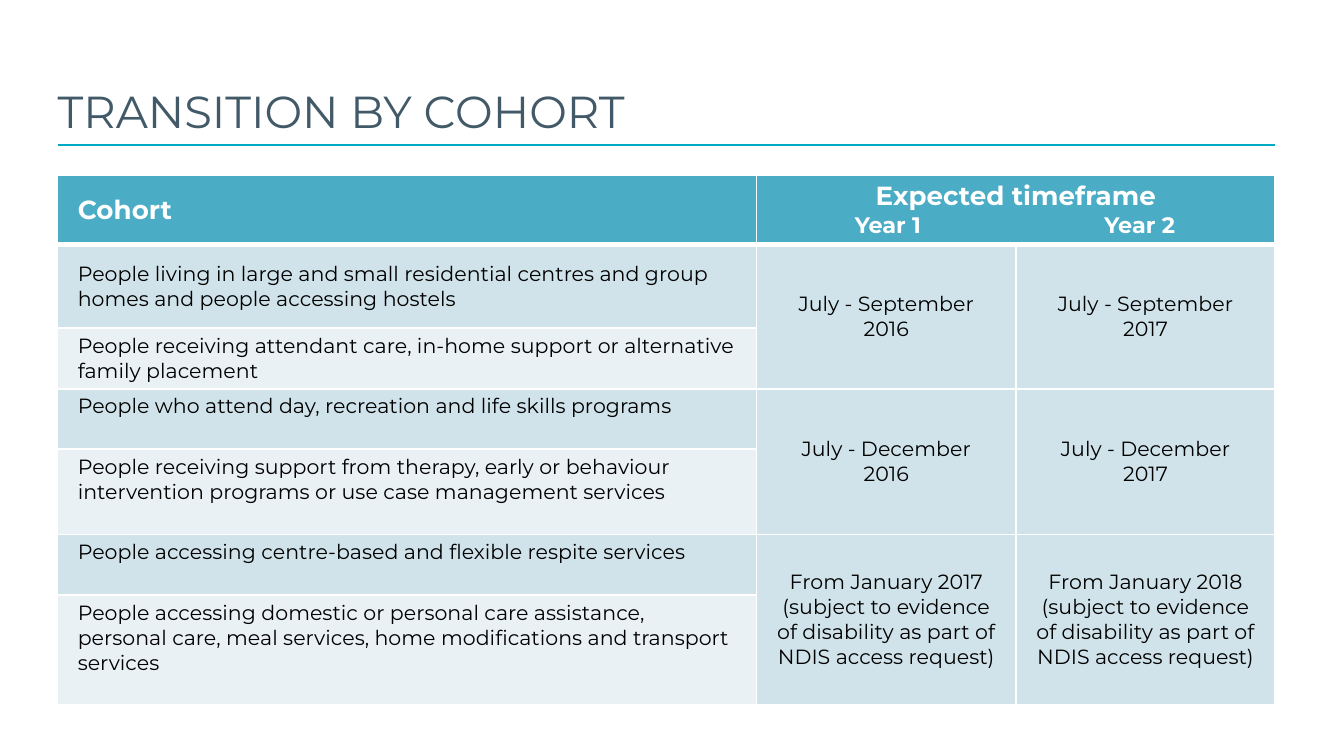
from dataclasses import dataclass

from lxml import etree
from pptx import Presentation, util as u
from pptx.dml.color import RGBColor
from pptx.enum import shapes, text
from pptx.oxml import ns


@dataclass(frozen=True)
class Theme:
    font: str = "Montserrat"
    title: str = "425968"
    rule: str = "00ABC3"
    header: str = "4BACC6"
    dark_band: str = "D0E3EA"
    light_band: str = "E9F1F5"
    white: str = "FFFFFF"
    black: str = "000000"
    title_size: int = 24
    header_size: int = 14
    year_size: int = 12
    body_size: int = 11


LEFT, WIDTH = 1.09, 23.01
COLUMNS = [13.21, 4.9, 4.9]
ROWS = [1.3, 1.57, 1.14, 1.14, 1.62, 1.14, 2.08]
YEAR_CENTRES = [2.1, 6.86]

COHORTS = [
    "People living in large and small residential centres and group homes "
    "and people accessing hostels",
    "People receiving attendant care, in-home support or alternative family placement",
    "People who attend day, recreation and life skills programs",
    "People receiving support from therapy, early or behaviour intervention programs "
    "or use case management services",
    "People accessing centre-based and flexible respite services",
    "People accessing domestic or personal care assistance, personal care, "
    "meal services, home modifications and transport services",
]
EVIDENCE = "(subject to evidence of disability as part of NDIS access request)"
TIMEFRAMES = [
    ("July - September 2016", "July - September 2017"),
    ("July - December 2016", "July - December 2017"),
    (f"From January 2017 {EVIDENCE}", f"From January 2018 {EVIDENCE}"),
]


class SlideBuilder:
    def __init__(self, slide, theme):
        self.slide = slide
        self.theme = theme

    def add_run(self, paragraph, words, size, color, bold=False):
        run = paragraph.add_run()
        run.text = words
        run.font.name = self.theme.font
        run.font.size = u.Pt(size)
        run.font.bold = bold
        run.font.color.rgb = RGBColor.from_string(color)

    def title(self, words, left, top, width, height):
        shape = self.slide.shapes.title
        shape.left, shape.top = u.Cm(left), u.Cm(top)
        shape.width, shape.height = u.Cm(width), u.Cm(height)
        frame = shape.text_frame
        frame.auto_size = text.MSO_AUTO_SIZE.NONE
        frame.word_wrap = True
        frame.vertical_anchor = text.MSO_ANCHOR.BOTTOM
        frame.margin_left = 0
        paragraph = frame.paragraphs[0]
        paragraph.alignment = text.PP_ALIGN.LEFT
        self.add_run(paragraph, words, self.theme.title_size, self.theme.title)

    def rule(self, left, top, width):
        line = self.slide.shapes.add_connector(
            shapes.MSO_CONNECTOR.STRAIGHT,
            u.Cm(left), u.Cm(top), u.Cm(left + width), u.Cm(top))
        line.line.color.rgb = RGBColor.from_string(self.theme.rule)
        line.line.width = u.Pt(1)
        etree.SubElement(line._element.spPr, ns.qn("a:effectLst"))

    def table(self, left, top, columns, rows):
        frame = self.slide.shapes.add_table(
            len(rows), len(columns), u.Cm(left), u.Cm(top),
            u.Cm(sum(columns)), u.Cm(sum(rows)))
        table = frame.table
        table.horz_banding = False
        for column, width in zip(table.columns, columns):
            column.width = u.Cm(width)
        for row, height in zip(table.rows, rows):
            row.height = u.Cm(height)
        return table

    def cell_style(self, cell, fill, top=1, bottom=1):
        """Set fill, insets and white borders; top and bottom are widths in points."""
        properties = cell._tc.get_or_add_tcPr()
        for side, points in (("L", 1), ("R", 1), ("T", top), ("B", bottom)):
            border = etree.SubElement(
                properties, ns.qn(f"a:ln{side}"), w=str(u.Pt(points)))
            solid = etree.SubElement(border, ns.qn("a:solidFill"))
            etree.SubElement(solid, ns.qn("a:srgbClr"), val=self.theme.white)
        cell.fill.solid()
        cell.fill.fore_color.rgb = RGBColor.from_string(fill)
        cell.margin_left = cell.margin_right = u.Cm(0.38)
        cell.margin_top = cell.margin_bottom = u.Cm(0.1)
        cell.vertical_anchor = text.MSO_ANCHOR.MIDDLE

    def cell_text(self, cell, words, size, color, bold=False, centred=False):
        paragraph = cell.text_frame.paragraphs[0]
        if centred:
            paragraph.alignment = text.PP_ALIGN.CENTER
        self.add_run(paragraph, words, size, color, bold)

    def year_line(self, cell, years, centres):
        """Add a line whose words are centred on tab stops."""
        paragraph = cell.text_frame.add_paragraph()
        paragraph.alignment = text.PP_ALIGN.LEFT
        stops = etree.SubElement(
            paragraph._p.get_or_add_pPr(), ns.qn("a:tabLst"))
        for year, centre in zip(years, centres):
            etree.SubElement(stops, ns.qn("a:tab"), pos=str(u.Cm(centre)), algn="ctr")
            self.add_run(paragraph, f"\t{year}", self.theme.year_size,
                         self.theme.white, bold=True)


def fill_table(builder, table):
    theme = builder.theme
    for row in range(len(ROWS)):
        for column in range(len(COLUMNS)):
            if row == 0:
                fill = theme.header
            elif column == 0 and row % 2 == 0:
                fill = theme.light_band
            else:
                fill = theme.dark_band
            builder.cell_style(table.cell(row, column), fill,
                               top=3 if row == 1 else 1,
                               bottom=3 if row == 0 else 1)

    timeframe = table.cell(0, 1)
    timeframe.merge(table.cell(0, 2))
    builder.cell_text(table.cell(0, 0), "Cohort", theme.header_size, theme.white, bold=True)
    builder.cell_text(timeframe, "Expected timeframe", theme.header_size,
                      theme.white, bold=True, centred=True)
    builder.year_line(timeframe, ["Year 1", "Year 2"], YEAR_CENTRES)

    for row, cohort in enumerate(COHORTS, start=1):
        cell = table.cell(row, 0)
        if row > 2:
            cell.vertical_anchor = text.MSO_ANCHOR.TOP
        builder.cell_text(cell, cohort, theme.body_size, theme.black)

    for group, periods in enumerate(TIMEFRAMES):
        row = 1 + 2 * group
        for column, period in enumerate(periods, start=1):
            cell = table.cell(row, column)
            cell.merge(table.cell(row + 1, column))
            builder.cell_text(cell, period, theme.body_size, theme.black, centred=True)


def main():
    presentation = Presentation()
    presentation.slide_width, presentation.slide_height = u.Cm(25.4), u.Cm(14.29)
    slide = presentation.slides.add_slide(presentation.slide_layouts[5])
    builder = SlideBuilder(slide, Theme())
    builder.rule(LEFT, 2.74, WIDTH)
    builder.title("TRANSITION BY COHORT", LEFT, 0.74, WIDTH, 1.98)
    fill_table(builder, builder.table(LEFT, 3.31, COLUMNS, ROWS))
    presentation.save("out.pptx")


if __name__ == "__main__":
    main()
